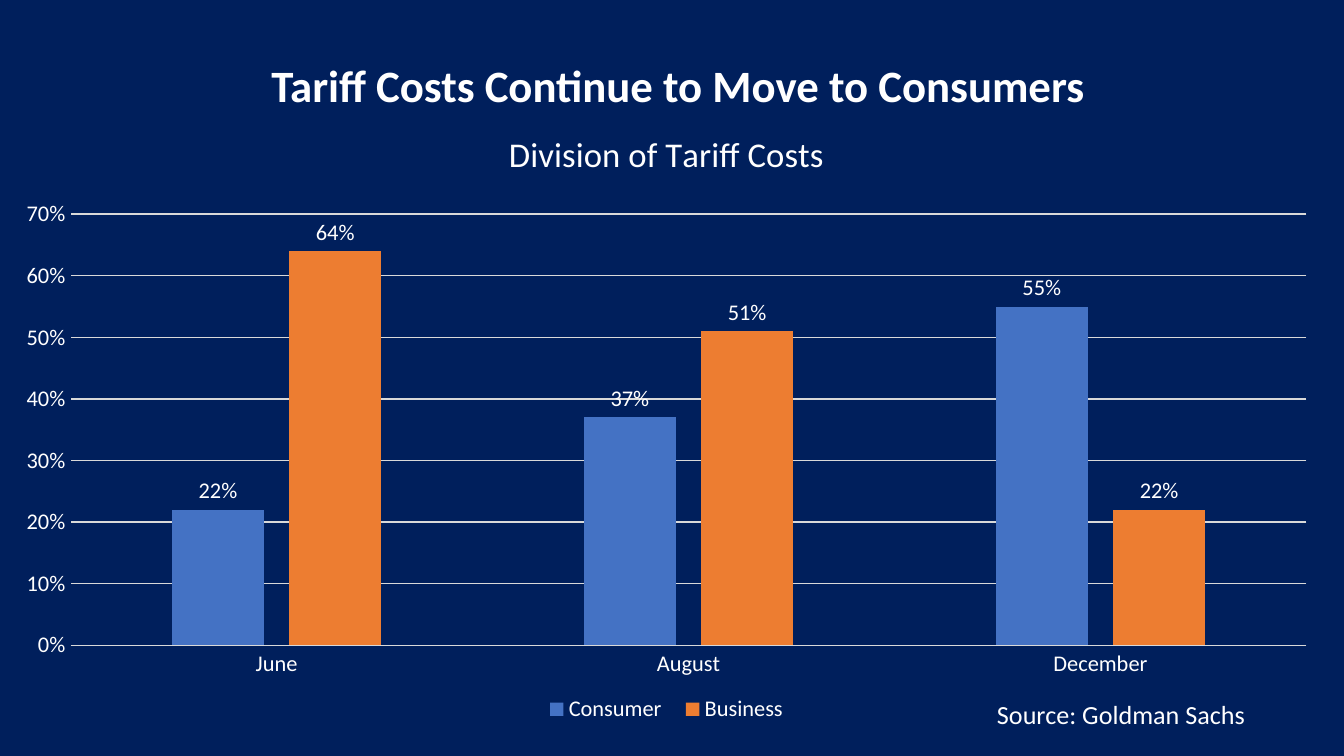
from dataclasses import dataclass

from lxml import etree
from pptx import Presentation
from pptx import util as u
from pptx.chart.data import CategoryChartData
from pptx.dml.color import RGBColor
from pptx.enum import chart as ch, text
from pptx.oxml.ns import qn


@dataclass(frozen=True)
class Theme:
    font: str = "Calibri"
    background: str = "001F5C"
    ink: str = "FFFFFF"
    grid: str = "D9D9D9"
    consumer: str = "4472C4"
    business: str = "ED7D31"
    title: float = 24
    chart_title: float = 18.6
    source: float = 14
    label: float = 12


THEME = Theme()


def rgb(value):
    return RGBColor.from_string(value)


def style(font, size, bold=False):
    font.name, font.size, font.bold = THEME.font, u.Pt(size), bold
    font.color.rgb = rgb(THEME.ink)


def rule(line):
    line.color.rgb = rgb(THEME.grid)
    line.width = u.Pt(0.75)


def set_layout(parent, index, **settings):
    old = parent.find(qn("c:layout"))
    if old is not None:
        parent.remove(old)
    layout = etree.Element(qn("c:layout"))
    manual = etree.SubElement(layout, qn("c:manualLayout"))
    target = settings.pop("target", None)
    if target:
        etree.SubElement(manual, qn("c:layoutTarget")).set("val", target)
    for name, value in {"xMode": "edge", "yMode": "edge", **settings}.items():
        etree.SubElement(manual, qn(f"c:{name}")).set("val", str(value))
    parent.insert(index, layout)


def add_text(s, box, words, size, bold=False):
    sp = s.shapes.add_textbox(*map(u.Inches, box))
    tf = sp.text_frame
    p = tf.paragraphs[0]
    p.text = words
    style(p.font, size, bold)
    return tf, p


def add_title(s, box):
    tf, p = add_text(s, box, "Tariff Costs Continue to Move to Consumers",
                     THEME.title, bold=True)
    tf.word_wrap = True
    tf.margin_left, tf.margin_top = u.Inches(0.25), u.Inches(0.3)
    tf.margin_right = tf.margin_bottom = 0
    p.alignment = text.PP_ALIGN.CENTER
    p.line_spacing = u.Pt(56)


def add_source(s, box):
    tf, p = add_text(s, box, "Source: Goldman Sachs", THEME.source)
    tf.word_wrap = False
    tf.auto_size = text.MSO_AUTO_SIZE.SHAPE_TO_FIT_TEXT


def add_cost_chart(s, box):
    data = CategoryChartData(number_format="0%")
    data.categories = ["June", "August", "December"]
    data.add_series("Consumer", [0.22, 0.37, 0.55])
    data.add_series("Business", [0.64, 0.51, 0.22])
    chart = s.shapes.add_chart(ch.XL_CHART_TYPE.COLUMN_CLUSTERED,
                               *map(u.Inches, box), data).chart
    style(chart.font, THEME.label)

    chart.has_title = True
    p = chart.chart_title.text_frame.paragraphs[0]
    p.text = "Division of Tariff Costs"
    style(p.font, THEME.chart_title)

    chart.has_legend = True
    chart.legend.position = ch.XL_LEGEND_POSITION.BOTTOM
    chart.legend.include_in_layout = False
    style(chart.legend.font, THEME.label)

    root = chart.element.find(qn("c:chart"))
    set_layout(root.find(qn("c:title")), 1, x=0.377, y=0.03)
    set_layout(root.find(qn("c:plotArea")), 0, target="inner",
               x=0.053, y=0.173, w=0.927, h=0.681)
    set_layout(root.find(qn("c:legend")), 1, x=0.4, y=0.92, w=0.2, h=0.07)

    for axis in (chart.category_axis, chart.value_axis):
        axis.major_tick_mark = axis.minor_tick_mark = ch.XL_TICK_MARK.NONE
        style(axis.tick_labels.font, THEME.label)
    rule(chart.category_axis.format.line)
    values = chart.value_axis
    values.minimum_scale, values.maximum_scale, values.major_unit = 0, 0.7, 0.1
    values.tick_labels.number_format = "0%"
    values.tick_labels.number_format_is_linked = False
    values.format.line.fill.background()
    rule(values.major_gridlines.format.line)

    plot = chart.plots[0]
    plot.gap_width, plot.overlap, plot.vary_by_categories = 219, -27, False
    for series, color in zip(plot.series, (THEME.consumer, THEME.business)):
        series.format.fill.solid()
        series.format.fill.fore_color.rgb = rgb(color)
        labels = series.data_labels
        labels.show_value = True
        labels.number_format = "0%"
        labels.number_format_is_linked = False
        labels.position = ch.XL_LABEL_POSITION.OUTSIDE_END
        style(labels.font, THEME.label)


def main():
    prs = Presentation()
    prs.slide_width, prs.slide_height = u.Inches(10), u.Inches(10 * 9 / 16)
    s = prs.slides.add_slide(prs.slide_layouts[6])
    s.background.fill.solid()
    s.background.fill.fore_color.rgb = rgb(THEME.background)
    add_title(s, (-0.08, -0.25, 10, 0.89))
    add_cost_chart(s, (0, 0.78, 9.92, 4.71))
    add_source(s, (7.32, 5.15, 2.06, 0.34))
    prs.save("out.pptx")


if __name__ == "__main__":
    main()
